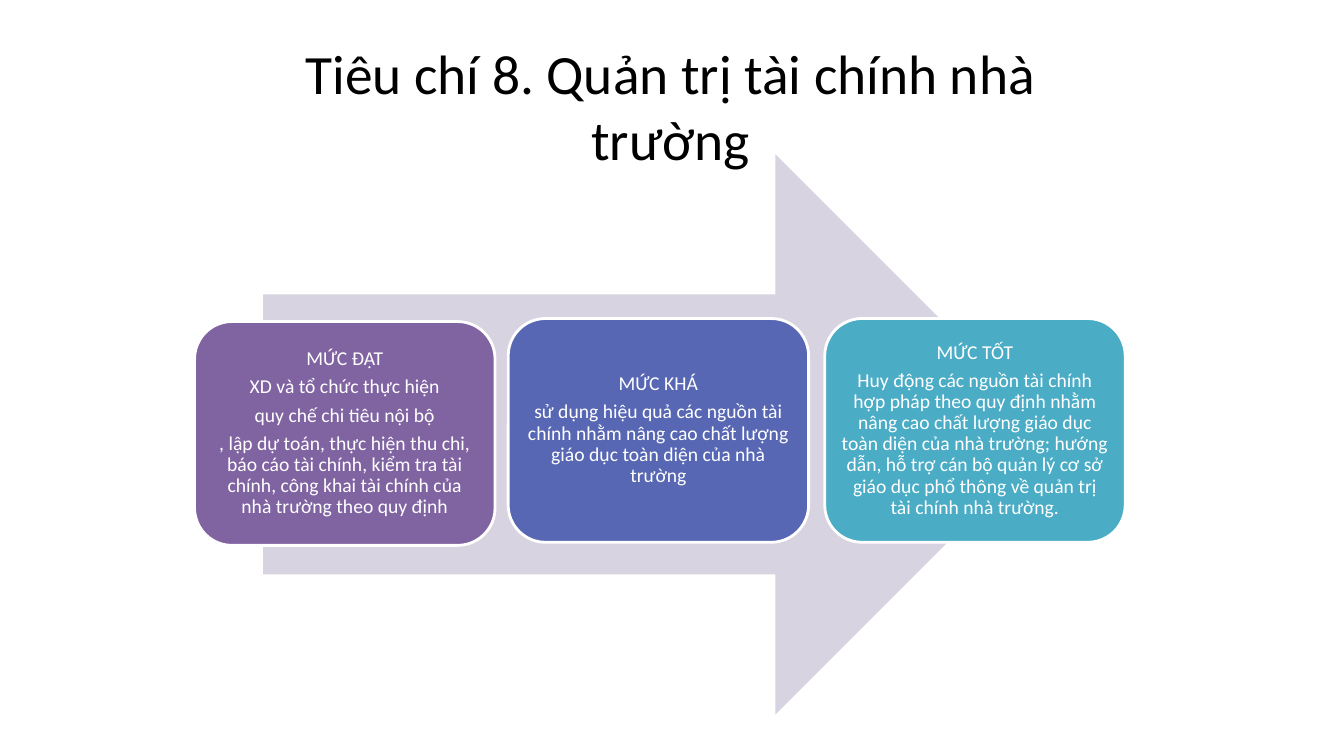
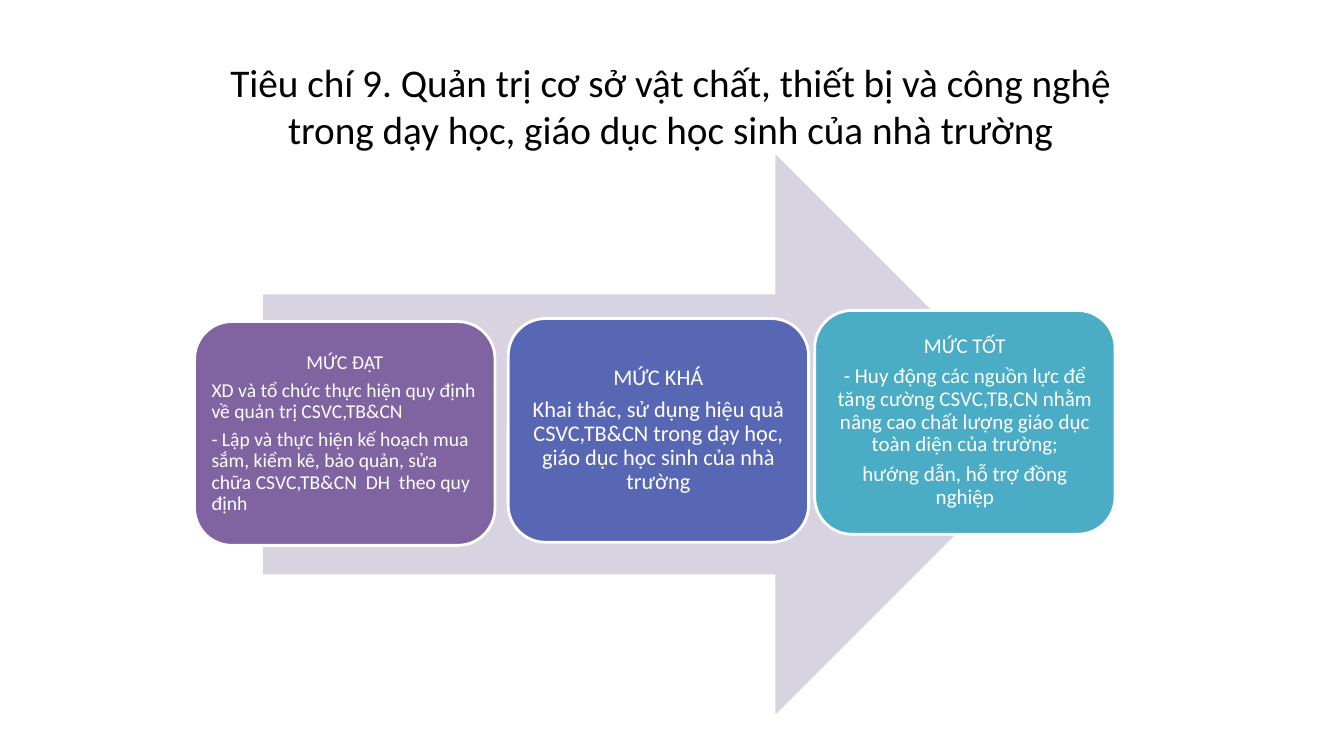
import pptx
import pptx.dml.color
import pptx.enum.shapes
import pptx.enum.text
import pptx.util

Inches = pptx.util.Inches
Pt = pptx.util.Pt
Shape = pptx.enum.shapes.MSO_SHAPE
Align = pptx.enum.text.PP_ALIGN
Anchor = pptx.enum.text.MSO_ANCHOR

COLORS = {
    "title": "000000",
    "arrow": "D8D3E0",
    "pass": "8064A2",
    "fair": "5767B4",
    "good": "4BACC6",
    "white": "FFFFFF",
}
FONT = "Calibri"
TITLE_BOX = (2.15, 0.42, 9, 1.25)
DIAGRAM_BOX = (1.93, 1.53, 9.23, 5.56)
ARROW_INDENT, ARROW_WIDTH = 0.68, 7.86
CARD_WIDTH, CARD_HEIGHT = 2.98, 2.22

CRITERIA = [
    {
        "title": "Tiêu chí 8. Quản trị tài chính nhà trường",
        "title_size": 39.6,
        "levels": [
            {
                "color": "pass", "offset": (0, 1.66), "size": 14,
                "heading": "MỨC ĐẠT",
                "body": [
                    "XD và tổ chức thực hiện",
                    "quy chế chi tiêu nội bộ",
                    ", lập dự toán, thực hiện thu chi, báo cáo tài chính, kiểm tra tài chính, "
                    "công khai tài chính của nhà trường theo quy định",
                ],
            },
            {
                "color": "fair", "offset": (3.11, 1.63), "size": 14,
                "heading": "MỨC KHÁ",
                "body": [
                    "sử dụng hiệu quả các nguồn tài chính nhằm nâng cao chất lượng "
                    "giáo dục toàn diện của nhà trường",
                ],
            },
            {
                "color": "good", "offset": (6.25, 1.63), "size": 14,
                "heading": "MỨC TỐT",
                "body": [
                    "Huy động các nguồn tài chính hợp pháp theo quy định nhằm nâng cao "
                    "chất lượng giáo dục toàn diện của nhà trường; hướng dẫn, hỗ trợ cán bộ "
                    "quản lý cơ sở giáo dục phổ thông về quản trị tài chính nhà trường.",
                ],
            },
        ],
    },
    {
        "title": "Tiêu chí 9. Quản trị cơ sở vật chất, thiết bị và công nghệ "
                 "trong dạy học, giáo dục học sinh của nhà trường",
        "title_size": 28,
        "levels": [
            {
                "color": "pass", "offset": (0, 1.66), "size": 14,
                "heading": "MỨC ĐẠT", "body_align": Align.LEFT,
                "body": [
                    "XD và tổ chức thực hiện quy định về quản trị CSVC,TB&CN",
                    "- Lập và thực hiện kế hoạch mua sắm, kiểm kê, bảo quản, sửa chữa "
                    "CSVC,TB&CN  DH  theo quy định",
                ],
            },
            {
                "color": "fair", "offset": (3.11, 1.63), "size": 16, "inset": 0.07,
                "heading": "MỨC KHÁ",
                "body": [
                    "Khai thác, sử dụng hiệu quả CSVC,TB&CN trong dạy học, "
                    "giáo dục học sinh của nhà trường",
                ],
            },
            {
                "color": "good", "offset": (6.15, 1.55), "size": 15,
                "heading": "MỨC TỐT",
                "body": [
                    "- Huy động các nguồn lực để tăng cường CSVC,TB,CN nhằm nâng cao "
                    "chất lượng giáo dục toàn diện của trường;",
                    "hướng dẫn, hỗ trợ đồng nghiệp",
                ],
            },
        ],
    },
]


def rgb(name):
    return pptx.dml.color.RGBColor.from_string(COLORS[name])


def add_run(paragraph, text, size, color):
    run = paragraph.add_run()
    run.text = text
    run.font.name = FONT
    run.font.size = Pt(size)
    run.font.color.rgb = rgb(color)


def add_filled_shape(shapes, kind, box, color):
    shape = shapes.add_shape(kind, *map(Inches, box))
    shape.shadow.inherit = False
    shape.fill.solid()
    shape.fill.fore_color.rgb = rgb(color)
    shape.line.fill.background()
    return shape


def format_title_layout(layout):
    title = layout.placeholders[0]
    title.left, title.top, title.width, title.height = map(Inches, TITLE_BOX)
    frame = title.text_frame
    frame.word_wrap = True
    frame.auto_size = pptx.enum.text.MSO_AUTO_SIZE.NONE
    frame.vertical_anchor = Anchor.MIDDLE


def add_title(slide, text, size):
    paragraph = slide.shapes.title.text_frame.paragraphs[0]
    paragraph.alignment = Align.CENTER
    add_run(paragraph, text, size, "title")


def add_level_card(shapes, box, level):
    card = add_filled_shape(shapes, Shape.ROUNDED_RECTANGLE, box, level["color"])
    card.line.color.rgb = rgb("white")
    card.line.width = Pt(2)
    frame = card.text_frame
    frame.word_wrap = True
    frame.vertical_anchor = Anchor.MIDDLE
    inset = Inches(level.get("inset", 0.06))
    frame.margin_left = frame.margin_right = inset
    frame.margin_top = frame.margin_bottom = inset
    size = level["size"]
    for index, text in enumerate([level["heading"], *level["body"]]):
        paragraph = frame.add_paragraph() if index else frame.paragraphs[0]
        paragraph.alignment = level.get("body_align", Align.CENTER) if index else Align.CENTER
        paragraph.line_spacing = 0.9
        paragraph.space_after = Pt(0.35 * size)
        add_run(paragraph, text, size, "white")


def add_level_diagram(slide, box, levels):
    left, top, _, height = box
    shapes = slide.shapes.add_group_shape().shapes
    arrow_box = (left + ARROW_INDENT, top, ARROW_WIDTH, height)
    add_filled_shape(shapes, Shape.RIGHT_ARROW, arrow_box, "arrow")
    for level in levels:
        across, down = level["offset"]
        card_box = (left + across, top + down, CARD_WIDTH, CARD_HEIGHT)
        add_level_card(shapes, card_box, level)


def main():
    presentation = pptx.Presentation()
    presentation.slide_width = Inches(13.33)
    presentation.slide_height = Inches(7.5)
    layout = presentation.slide_layouts.get_by_name("Title Only")
    format_title_layout(layout)
    for criterion in CRITERIA:
        slide = presentation.slides.add_slide(layout)
        add_title(slide, criterion["title"], criterion["title_size"])
        add_level_diagram(slide, DIAGRAM_BOX, criterion["levels"])
    presentation.save("out.pptx")


if __name__ == "__main__":
    main()
